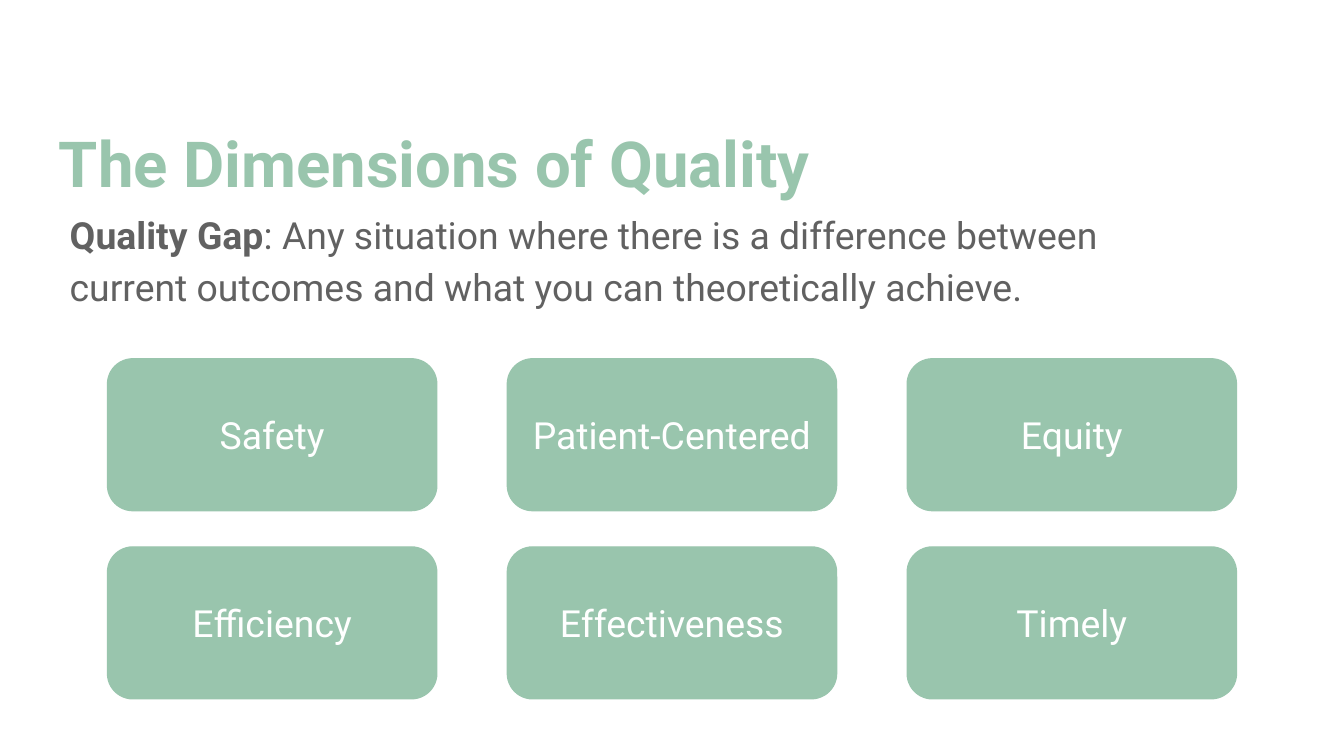
from dataclasses import dataclass

from pptx import Presentation
from pptx.dml.color import RGBColor
from pptx.enum.shapes import MSO_SHAPE
from pptx.enum.text import MSO_ANCHOR, PP_ALIGN
from pptx.util import Inches, Pt

GREEN = RGBColor(0x99, 0xC5, 0xAD)
GRAY = RGBColor(0x61, 0x61, 0x61)
WHITE = RGBColor(0xFF, 0xFF, 0xFF)
FONT = "Roboto"

PAGE_WIDTH = 10
PAGE_HEIGHT = PAGE_WIDTH * 9 / 16

DIMENSIONS = (
    ("Safety", "Patient-Centered", "Equity"),
    ("Efficiency", "Effectiveness", "Timely"),
)
CARD_WIDTH, CARD_HEIGHT = 2.45, 1.13
GRID_LEFT, GRID_RIGHT, GRID_TOP = 0.8, 9.2, 2.67
COLUMN_STEP = (GRID_RIGHT - GRID_LEFT - CARD_WIDTH) / (len(DIMENSIONS[0]) - 1)
ROW_STEP = 1.4


@dataclass(frozen=True)
class Card:
    label: str
    left: float
    top: float


def style_text(paragraph, size: float, color: RGBColor) -> None:
    paragraph.font.name = FONT
    paragraph.font.size = Pt(size)
    paragraph.font.color.rgb = color


def set_margins(frame) -> None:
    frame.word_wrap = True
    frame.margin_left = frame.margin_right = Inches(0.1)
    frame.margin_top = frame.margin_bottom = Inches(0.1)


def add_text(page, left: float, top: float, width: float, height: float,
             spans: list[tuple[str, bool]], size: float, color: RGBColor):
    """Add a one-paragraph text box from (text, bold) spans."""
    box = page.shapes.add_textbox(Inches(left), Inches(top), Inches(width), Inches(height))
    set_margins(box.text_frame)
    para = box.text_frame.paragraphs[0]
    style_text(para, size, color)
    for text, bold in spans:
        span = para.add_run()
        span.text = text
        span.font.bold = bold
    return para


def add_card(page, card: Card) -> None:
    shape = page.shapes.add_shape(
        MSO_SHAPE.ROUNDED_RECTANGLE, Inches(card.left), Inches(card.top),
        Inches(CARD_WIDTH), Inches(CARD_HEIGHT))
    shape.shadow.inherit = False
    shape.fill.solid()
    shape.fill.fore_color.rgb = GREEN
    shape.line.color.rgb = GREEN
    shape.line.width = Pt(0.75)
    frame = shape.text_frame
    set_margins(frame)
    frame.vertical_anchor = MSO_ANCHOR.MIDDLE
    para = frame.paragraphs[0]
    para.text = card.label
    para.alignment = PP_ALIGN.CENTER
    style_text(para, 20, WHITE)


def main() -> None:
    deck = Presentation()
    deck.slide_width, deck.slide_height = Inches(PAGE_WIDTH), Inches(PAGE_HEIGHT)
    page = deck.slides.add_slide(deck.slide_layouts[6])

    add_text(page, 0.34, 0.82, 9.32, 0.63, [("The Dimensions of Quality", True)], 34, GREEN)
    definition = add_text(page, 0.42, 1.43, 8.78, 3.44, [
        ("Quality Gap", True),
        (": Any situation where there is a difference between current outcomes "
         "and what you can theoretically achieve.", False),
    ], 20, GRAY)
    definition.line_spacing = 1.15

    for row, labels in enumerate(DIMENSIONS):
        for column, label in enumerate(labels):
            add_card(page, Card(label, GRID_LEFT + column * COLUMN_STEP,
                                GRID_TOP + row * ROW_STEP))

    deck.save("out.pptx")


if __name__ == "__main__":
    main()
